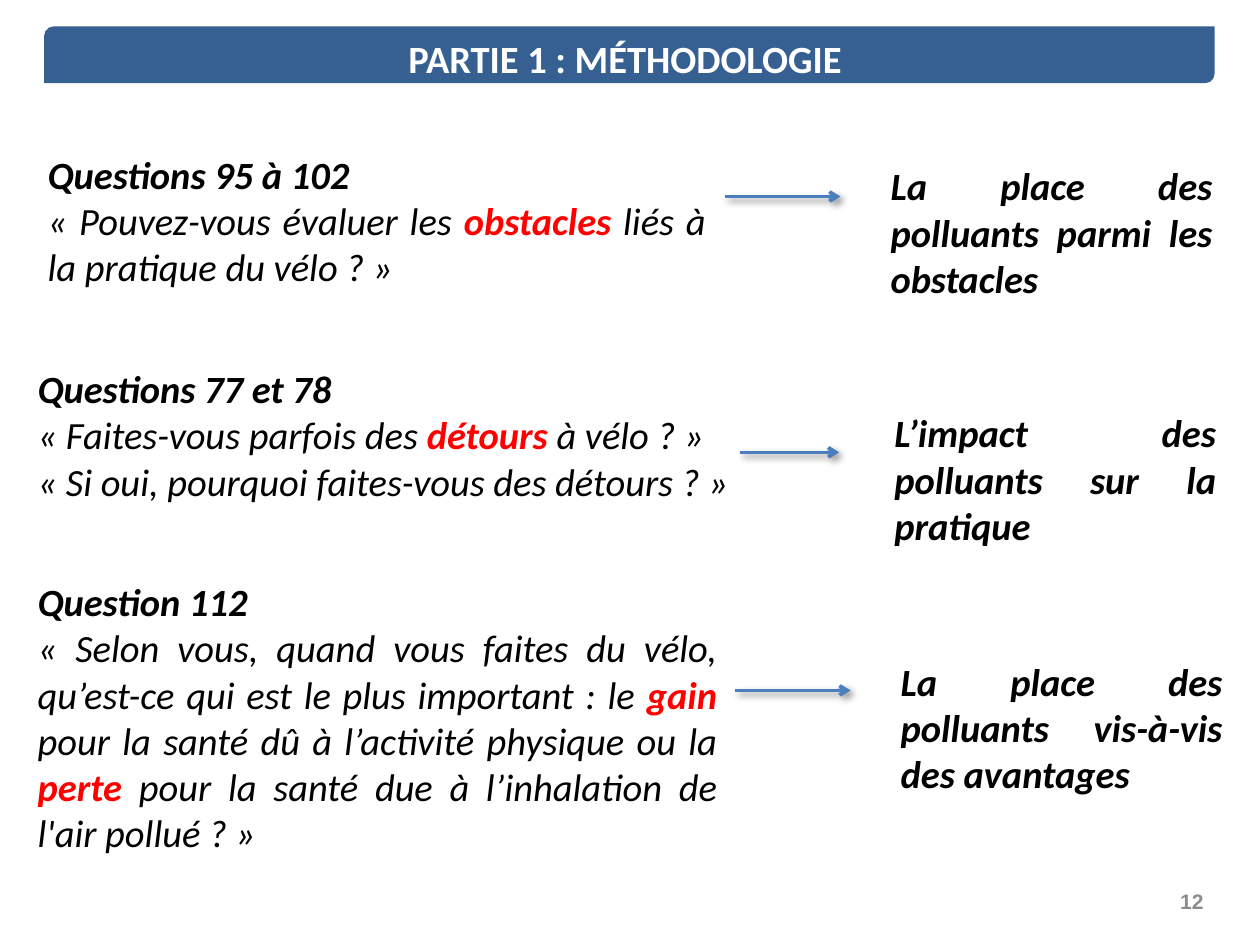
"""Build the methodology slide linking survey questions to their purposes."""
from lxml.etree import fromstring
from pptx import Presentation
from pptx.dml.color import RGBColor
from pptx.enum.shapes import MSO_CONNECTOR, MSO_SHAPE
from pptx.enum.text import MSO_ANCHOR, PP_ALIGN
from pptx.oxml.ns import nsdecls
from pptx.util import Inches, Pt

BLACK = RGBColor(0x00, 0x00, 0x00)
WHITE = RGBColor(0xFF, 0xFF, 0xFF)
RED = RGBColor(0xFF, 0x00, 0x00)
GREY = RGBColor(0x8C, 0x8C, 0x8C)
BANNER_BLUE = RGBColor(0x37, 0x60, 0x92)
ARROW_BLUE = RGBColor(0x4B, 0x7E, 0xBC)

ARROWHEAD = f'<a:tailEnd {nsdecls("a")} type="arrow"/>'
SHADOW = (
    f'<a:effectLst {nsdecls("a")}>'
    '<a:outerShdw blurRad="50800" dist="38100" dir="2700000" algn="tl" rotWithShape="0">'
    '<a:srgbClr val="000000"><a:alpha val="40000"/></a:srgbClr>'
    '</a:outerShdw></a:effectLst>'
)

QUESTIONS = [
    (0.28, 1.15, 5.42, 1.21, "Questions 95 à 102",
     ["« Pouvez-vous évaluer les *obstacles* liés à la pratique du vélo ? »"]),
    (0.2, 2.85, 5.75, 1.21, "Questions 77 et 78",
     ["« Faites-vous parfois des *détours* à vélo ? »",
      "« Si oui, pourquoi faites-vous des détours ? »"]),
    (0.2, 4.54, 5.59, 2.32, "Question 112",
     ["« Selon vous, quand vous faites du vélo, qu’est-ce qui est le plus important : "
      "le *gain* pour la santé dû à l’activité physique ou la *perte* pour la santé "
      "due à l’inhalation de l'air pollué ? »"]),
]
ARROWS = [(5.75, 6.67, 1.56), (5.87, 6.66, 3.59), (5.83, 6.75, 5.48)]
PURPOSES = [
    (6.97, 1.24, "La place des polluants parmi les obstacles"),
    (7, 3.2, "L’impact des polluants sur la pratique"),
    (7.05, 5.17, "La place des polluants vis-à-vis des avantages"),
]

presentation = Presentation()
presentation.slide_width = Inches(10)
presentation.slide_height = Inches(7.5)
slide = presentation.slides.add_slide(presentation.slide_layouts[6])


def add_text_frame(left, top, width, height):
    box = slide.shapes.add_textbox(Inches(left), Inches(top), Inches(width), Inches(height))
    box.text_frame.word_wrap = True
    return box.text_frame


def style_paragraph(paragraph, alignment, color, size=22, name="Calibri", bold=True, italic=True):
    paragraph.alignment = alignment
    font = paragraph.font
    font.name, font.size = name, Pt(size)
    font.bold, font.italic = bold, italic
    font.color.rgb = color


banner = slide.shapes.add_shape(
    MSO_SHAPE.ROUND_2_DIAG_RECTANGLE, Inches(0.35), Inches(0.21), Inches(9.29), Inches(0.45))
banner.shadow.inherit = False
banner.fill.solid()
banner.fill.fore_color.rgb = BANNER_BLUE
banner.line.fill.background()

title = add_text_frame(3.04, 0.23, 3.91, 0.39).paragraphs[0]
title.text = "PARTIE 1 : MÉTHODOLOGIE "
style_paragraph(title, PP_ALIGN.CENTER, WHITE, italic=False)

for left, top, width, height, heading, sentences in QUESTIONS:
    frame = add_text_frame(left, top, width, height)
    frame.paragraphs[0].text = heading
    style_paragraph(frame.paragraphs[0], PP_ALIGN.JUSTIFY, BLACK)
    for sentence in sentences:
        paragraph = frame.add_paragraph()
        style_paragraph(paragraph, PP_ALIGN.JUSTIFY, BLACK, bold=False)
        for index, part in enumerate(sentence.split("*")):
            run = paragraph.add_run()
            run.text = part
            if index % 2:
                run.font.bold = True
                run.font.color.rgb = RED

for start, end, height in ARROWS:
    arrow = slide.shapes.add_connector(
        MSO_CONNECTOR.STRAIGHT, Inches(start), Inches(height), Inches(end), Inches(height))
    arrow.line.color.rgb = ARROW_BLUE
    arrow.line.width = Pt(2)
    arrow.line._get_or_add_ln().append(fromstring(ARROWHEAD))
    arrow._element.spPr.append(fromstring(SHADOW))

for left, top, purpose in PURPOSES:
    paragraph = add_text_frame(left, top, 2.75, 1.21).paragraphs[0]
    paragraph.text = purpose
    style_paragraph(paragraph, PP_ALIGN.JUSTIFY, BLACK)

number_frame = add_text_frame(8.94, 6.95, 0.71, 0.4)
number_frame.vertical_anchor = MSO_ANCHOR.MIDDLE
number_frame.paragraphs[0].text = "12"
style_paragraph(number_frame.paragraphs[0], PP_ALIGN.RIGHT, GREY, 12, "Arial", italic=False)

presentation.save("out.pptx")
